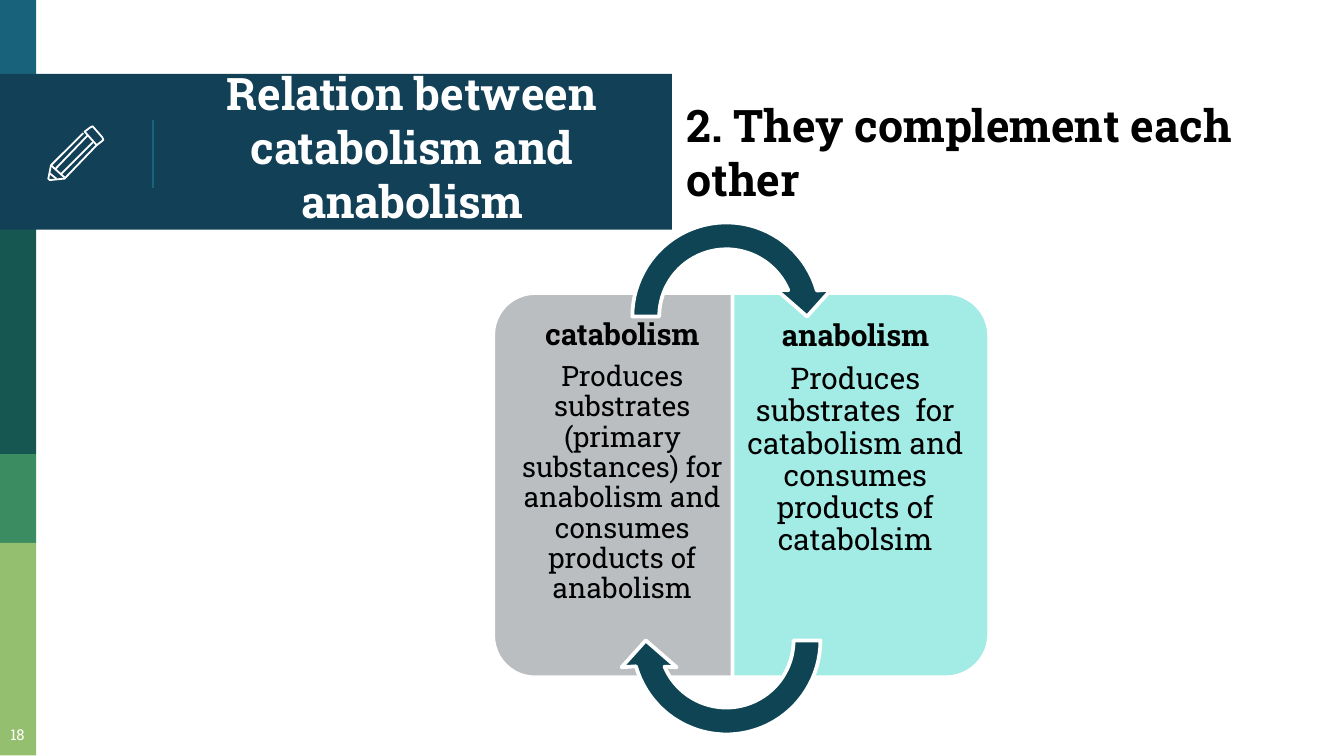
from collections import namedtuple
from dataclasses import dataclass
from math import cos, radians, sin

from pptx import Presentation
from pptx.dml.color import RGBColor
from pptx.enum.shapes import MSO_CONNECTOR, MSO_SHAPE
from pptx.enum.text import MSO_ANCHOR, PP_ALIGN
from pptx.oxml.ns import qn
from pptx.util import Inches, Pt

Box = namedtuple("Box", "left top width height")


@dataclass(frozen=True)
class Theme:
    font: str = "Roboto Slab"
    white: str = "FFFFFF"
    black: str = "000000"
    banner: str = "124057"
    blue: str = "18637B"
    teal: str = "165751"
    green: str = "3B8D61"
    lime: str = "94BF6E"
    gray: str = "BABEC0"
    aqua: str = "A3ECE6"
    arrow: str = "0E4454"
    heading: float = 24
    label: float = 16
    compact: float = 15
    number: float = 8
    outline: float = 2
    icon_line: float = 0.96
    hairline: float = 0.75


THEME = Theme()


def rgb(value):
    return RGBColor.from_string(value)


def style(shape, fill=None, line=None, weight=THEME.outline):
    shape.shadow.inherit = False
    if fill:
        shape.fill.solid()
        shape.fill.fore_color.rgb = rgb(fill)
    else:
        shape.fill.background()
    if line:
        shape.line.color.rgb = rgb(line)
        shape.line.width = Pt(weight)
    else:
        shape.line.fill.background()


def add_block(page, box, fill):
    shape = page.shapes.add_shape(MSO_SHAPE.RECTANGLE, *map(Inches, box))
    style(shape, fill)


def add_outline(page, points, closed=False, **look):
    start, *rest = [(Inches(x), Inches(y)) for x, y in points]
    builder = page.shapes.build_freeform(*start)
    builder.add_line_segments(rest, close=closed)
    style(builder.convert_to_shape(), **look)


def add_text(page, box, paragraphs, color=THEME.black, align=PP_ALIGN.CENTER,
             anchor=MSO_ANCHOR.TOP, insets=(0.1, 0.1, 0.1, 0.1), spacing=None, gap=0):
    frame = page.shapes.add_textbox(*map(Inches, box)).text_frame
    frame.word_wrap = True
    frame.vertical_anchor = anchor
    (frame.margin_left, frame.margin_top,
     frame.margin_right, frame.margin_bottom) = map(Inches, insets)
    for index, (text, size, bold) in enumerate(paragraphs):
        para = frame.add_paragraph() if index else frame.paragraphs[0]
        para.alignment = align
        if spacing:
            para.line_spacing = spacing
        if index:
            para.space_before = Pt(gap)
        span = para.add_run()
        span.text = text
        span.font.name = THEME.font
        span.font.size = Pt(size)
        span.font.bold = bold
        span.font.color.rgb = rgb(color)


def add_sidebar(page, box, number):
    bands = [(0, 0.58, THEME.blue), (1.7, 1.68, THEME.teal),
             (3.38, 0.66, THEME.green), (4.04, 1.58, THEME.lime)]
    for top, height, fill in bands:
        add_block(page, Box(box.left, box.top + top, box.width, height), fill)
    add_text(page, Box(box.left - 0.06, box.top + 5.27, 0.38, 0.35),
             [(number, THEME.number, False)], THEME.white, insets=(0.1, 0.13, 0.1, 0.05))


def add_pencil(page, box):
    strokes = [
        [(0.27, 0.04), (0.31, 0.01), (0.33, 0), (0.4, 0.08), (0.41, 0.1),
         (0.4, 0.11), (0.36, 0.14), (0.27, 0.04)],
        [(0.33, 0.12), (0.09, 0.36)],
        [(0.26, 0.05), (0.02, 0.29), (0, 0.39), (0.01, 0.4), (0.11, 0.39),
         (0.12, 0.39), (0.36, 0.14)],
        [(0.05, 0.32), (0.29, 0.07)],
        [(0.06, 0.39), (0.01, 0.35)],
        [(0.02, 0.29), (0.12, 0.38)],
    ]
    for stroke in strokes:
        points = [(box.left + x, box.top + y) for x, y in stroke]
        add_outline(page, points, line=THEME.white, weight=THEME.icon_line)


def add_banner(page, box, title):
    add_block(page, box, THEME.banner)
    x = Inches(box.left + 1.14)
    divider = page.shapes.add_connector(
        MSO_CONNECTOR.STRAIGHT, x, Inches(box.top + 0.34), x, Inches(box.top + 0.85))
    divider.line.color.rgb = rgb(THEME.blue)
    divider.line.width = Pt(THEME.hairline)
    properties = divider._element.spPr
    properties.append(properties.makeelement(qn("a:effectLst"), {}))
    add_text(page, Box(box.left + 1.14, box.top - 0.02, 3.85, 1.12),
             [(title, THEME.heading, True)], THEME.white, anchor=MSO_ANCHOR.MIDDLE)
    add_pencil(page, Box(box.left + 0.36, box.top + 0.39, 0.41, 0.41))


def add_panel(page, box, turn, fill, text_box, insets, paragraphs):
    left = box.left + (box.width - box.height) / 2
    top = box.top + (box.height - box.width) / 2
    panel = page.shapes.add_shape(MSO_SHAPE.ROUND_2_SAME_RECTANGLE,
                                  *map(Inches, (left, top, box.height, box.width)))
    panel.rotation = turn
    panel.adjustments[0] = 0.167
    panel.adjustments[1] = 0
    style(panel, fill, THEME.white)
    add_text(page, text_box, paragraphs, insets=insets, spacing=0.9, gap=5.6)


def arc(radius, start, end):
    step = 4 if end > start else -4
    angles = [*range(start, end, step), end]
    return [(radius * cos(radians(a)), -radius * sin(radians(a))) for a in angles]


def add_cycle_arrow(page, box, direction):
    center_x, center_y = box.left + box.width / 2, box.top + box.height / 2
    head = [(0.78, -0.2), (0.6, 0), (0.37, -0.2)]
    points = arc(0.7, 180, 16) + head + arc(0.5, 23, 180)
    placed = [(center_x + direction * x, center_y + direction * y) for x, y in points]
    add_outline(page, placed, closed=True, fill=THEME.arrow, line=THEME.white)


def add_cycle(page, box):
    def place(left, top, width, height):
        return Box(box.left + left, box.top + top, width, height)

    add_panel(page, place(0, 0.63, 1.86, 2.86), 270, THEME.gray,
              place(0.09, 0.72, 1.77, 2.68), (0.07, 0.11, 0.1, 0.11),
              [("catabolism", THEME.label, True),
               ("Produces substrates (primary substances) for anabolism and "
                "consumes products of anabolism", THEME.compact, False)])
    add_panel(page, place(1.78, 0.63, 1.91, 2.86), 90, THEME.aqua,
              place(1.77, 0.73, 1.82, 2.67), (0.1, 0.11, 0.07, 0.11),
              [("anabolism", THEME.label, True),
               ("Produces substrates  for catabolism and consumes products of "
                "catabolsim", THEME.label, False)])
    for top, direction in [(0, 1), (2.41, -1)]:
        add_cycle_arrow(page, place(0.93, top, 1.61, 1.61), direction)


def main():
    deck = Presentation()
    deck.slide_width = Inches(10)
    deck.slide_height = deck.slide_width * 9 // 16
    page = deck.slides.add_slide(deck.slide_layouts[6])
    add_sidebar(page, Box(0, 0, 0.27, 5.62), "18")
    add_banner(page, Box(0, 0.55, 5, 1.16), "Relation between catabolism and anabolism")
    add_text(page, Box(5.01, 0.68, 4.99, 0.91),
             [("2. They complement each other", THEME.heading, True)],
             align=PP_ALIGN.LEFT, insets=(0.1, 0.05, 0.1, 0.05))
    add_cycle(page, Box(3.67, 1.55, 3.69, 4.02))
    deck.save("out.pptx")


if __name__ == "__main__":
    main()
